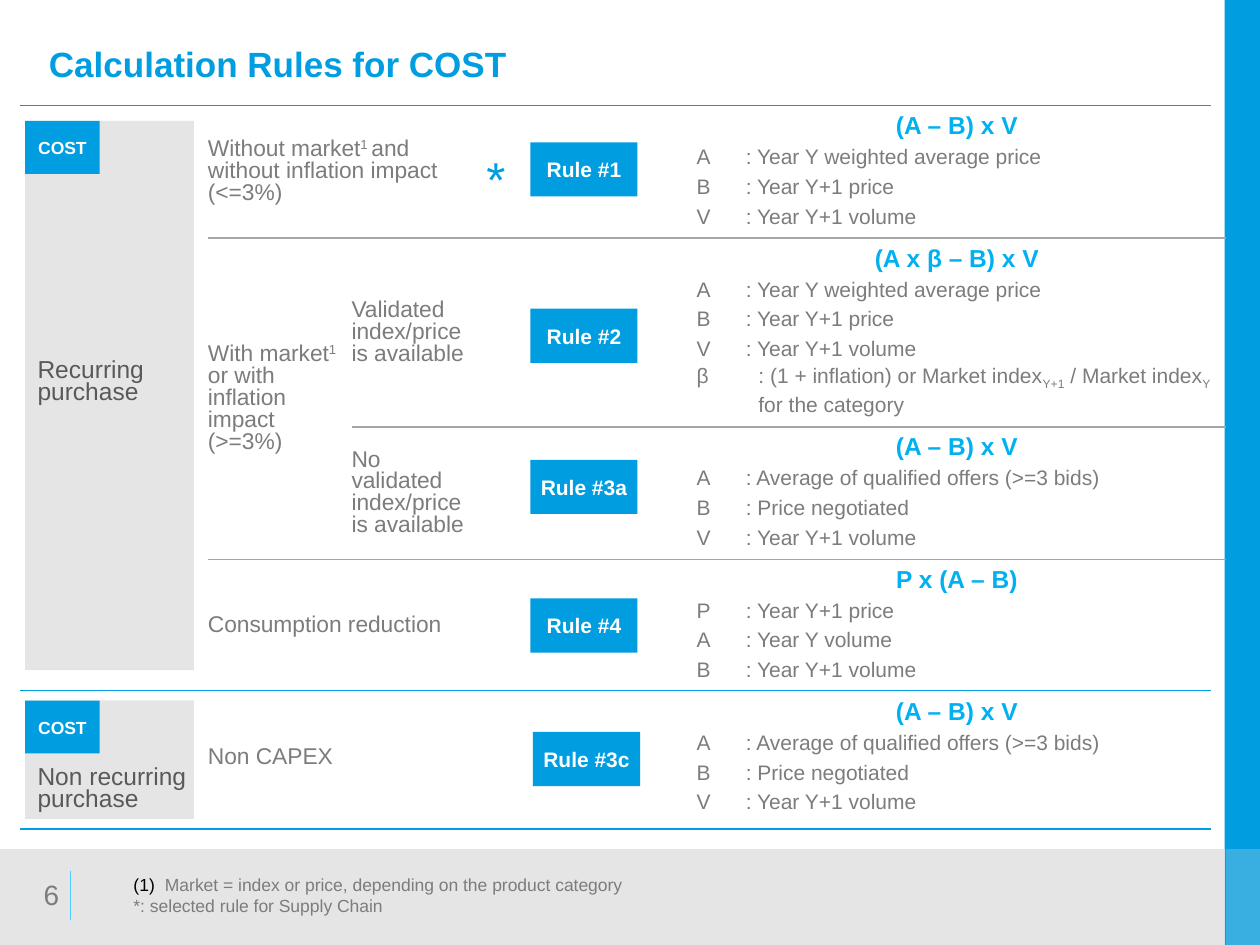
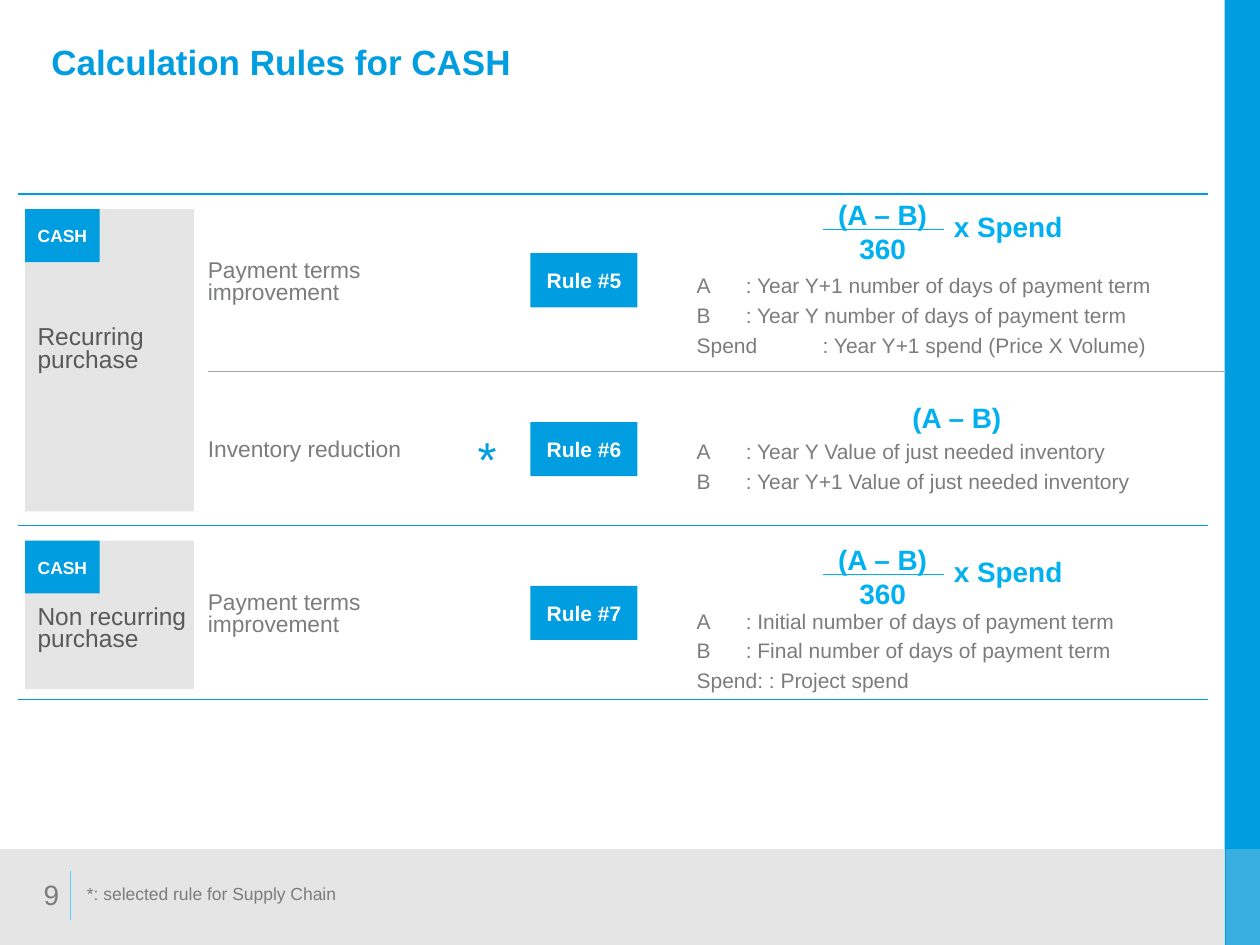
from lxml import etree
from pptx import Presentation, util as u
from pptx.dml.color import RGBColor
from pptx.enum import shapes, text
from pptx.oxml import parse_xml
from pptx.oxml.ns import nsdecls, qn

COLORS = {"brand": "009EE0", "formula": "00B0F0", "body": "7B7C7E", "dark": "595959", "band": "E5E5E5",
          "mark": "53CCFF", "grid": "A6A6A6", "white": "FFFFFF", "black": "000000"}
FONT = "Arial"
WIDTH, HEIGHT = 10, 7.5
BAND_X, BAND_Y = 9.72, 6.74
BADGE_X, BADGE_SIZE = 4.21, (0.85, 0.43)
TABLE_X, CELL_MARGIN = 1.65, 0.07
TAB_STOPS = (0.39, 1)
NO_STYLE = "{2D5ABB26-0587-4C30-8999-92F81FD0307C}"
LEFT, CENTER, RIGHT = text.PP_ALIGN.LEFT, text.PP_ALIGN.CENTER, text.PP_ALIGN.RIGHT
TOP, MIDDLE, BOTTOM = text.MSO_ANCHOR.TOP, text.MSO_ANCHOR.MIDDLE, text.MSO_ANCHOR.BOTTOM
NO_INSETS, DEFAULT_INSETS = (0, 0, 0, 0), (0.1, 0.05, 0.1, 0.05)

YEAR_TERMS = ["A\t: Year Y weighted average price", "B\t: Year Y+1 price", "V\t: Year Y+1 volume"]
OFFER_TERMS = ["A\t: Average of qualified offers (>=3 bids)", "B\t: Price negotiated", "V\t: Year Y+1 volume"]
BETA_TERM = [("β\t: (1 + inflation) or Market index", 0), ("Y+1", -25), (" / Market index", 0),
             ("Y ", -25), ("for the category", 0)]
SELECTED_NOTE = "*: selected rule for Supply Chain"

SLIDES = [
    {
        "topic": "COST", "title_at": (0.29, 0.35), "number": "6",
        "notes": ["Market = index or price, depending on the product category", SELECTED_NOTE],
        "notes_at": (1.06, 6.96, 3.9, 0.46), "numbered_note": True,
        "groups": [("Recurring purchase", 0.96, 4.36, 2.73), ("Non recurring purchase", 5.56, 0.94, 5.96)],
        "rules_x": 0.16, "rules_y": [0.84, 5.48, 6.58],
        "star_at": (3.66, 1.13), "fractions_y": [],
        "badges": [("Rule #1", 0, 1.13), ("Rule #2", 0, 2.45), ("Rule #3a", 0, 3.65), ("Rule #4", 0, 4.75),
                   ("Rule #3c", 0.02, 5.81)],
        "table_y": 0.84, "columns": [1.14, 0.98, 0.08, 1.06, 0.55, 4.27],
        "rows": [1.05, 1.5, 1.05, 1.05, 1.05],
        "merges": [(0, 0, 0, 1), (1, 0, 2, 0), (3, 0, 3, 1), (4, 0, 4, 1)],
        "border_starts": {0: 0, 1: 1, 2: 0},
        "cases": {
            (0, 0): [("Without market", 0), ("1 ", 30), ("and without inflation impact (<=3%)", 0)],
            (1, 0): [("With market", 0), ("1 ", 30), ("or with inflation impact (>=3%)", 0)],
            (1, 1): "Validated index/price is available",
            (2, 1): "No validated index/price is available",
            (3, 0): "Consumption reduction",
            (4, 0): "Non CAPEX",
        },
        "formula_size": 14, "bottom_margins": {},
        "formulas": [
            ("(A – B) x V", YEAR_TERMS),
            ("(A x β – B) x V", YEAR_TERMS + [BETA_TERM]),
            ("(A – B) x V", OFFER_TERMS),
            ("P x (A – B)", ["P\t: Year Y+1 price", "A\t: Year Y volume", "B\t: Year Y+1 volume"]),
            ("(A – B) x V", OFFER_TERMS),
        ],
    },
    {
        "topic": "CASH", "title_at": (0.31, 0.33), "number": "9",
        "notes": [SELECTED_NOTE], "notes_at": (0.69, 7.01, 6.14, 0.17), "numbered_note": False,
        "groups": [("Recurring purchase", 1.66, 2.4, 2.47), ("Non recurring purchase", 4.29, 1.18, 4.69)],
        "rules_x": 0.14, "rules_y": [1.54, 4.17, 5.55],
        "star_at": (3.59, 3.35), "fractions_y": [1.52, 4.26],
        "badges": [("Rule #5", 0, 2.01), ("Rule #6", 0, 3.35), ("Rule #7", 0, 4.65)],
        "table_y": 1.54, "columns": [2.12, 0.08, 1.06, 0.55, 4.27],
        "rows": [1.41, 1.25, 1.36],
        "merges": [], "border_starts": {0: 0},
        "cases": {(0, 0): "Payment terms improvement", (1, 0): "Inventory reduction",
                  (2, 0): "Payment terms improvement"},
        "formula_size": 16, "bottom_margins": {0: 0.11, 2: 0.06},
        "formulas": [
            (None, ["A\t: Year Y+1 number of days of payment term", "B\t: Year Y number of days of payment term",
                    "Spend\t: Year Y+1 spend (Price X Volume)"]),
            ("(A – B)", ["A\t: Year Y Value of just needed inventory",
                         "B\t: Year Y+1 Value of just needed inventory"]),
            (None, ["A\t: Initial number of days of payment term", "B\t: Final number of days of payment term",
                    "Spend: : Project spend"]),
        ],
    },
]


def rgb(name):
    return RGBColor.from_string(COLORS[name])


def write(paragraph, content, size, color, bold=False, align=LEFT, spacing=None):
    runs = [(content, 0)] if isinstance(content, str) else content
    for words, baseline in runs:
        run = paragraph.add_run()
        run.text = words
        if baseline:
            run.font._element.set("baseline", str(baseline * 1000))
    paragraph.alignment = align
    if spacing:
        paragraph.line_spacing = spacing
    font = paragraph.font
    font.name, font.size, font.bold = FONT, u.Pt(size), bold
    font.color.rgb = rgb(color)


def set_frame(frame, insets, anchor=MIDDLE, wrap=True):
    frame.margin_left, frame.margin_top, frame.margin_right, frame.margin_bottom = map(u.Inches, insets)
    frame.vertical_anchor = anchor
    frame.word_wrap = wrap


def add_text(parent, at, content, size, color, insets=DEFAULT_INSETS, anchor=MIDDLE, wrap=True, **style):
    frame = parent.add_textbox(*map(u.Inches, at)).text_frame
    set_frame(frame, insets, anchor, wrap)
    write(frame.paragraphs[0], content, size, color, **style)


def add_block(parent, at, color, label=None, size=10, insets=NO_INSETS, wrap=True):
    shape = parent.add_shape(shapes.MSO_SHAPE.RECTANGLE, *map(u.Inches, at))
    shape.shadow.inherit = False
    shape.fill.solid()
    shape.fill.fore_color.rgb = rgb(color)
    shape.line.fill.background()
    if label:
        set_frame(shape.text_frame, insets, MIDDLE, wrap)
        write(shape.text_frame.paragraphs[0], label, size, "white", True, CENTER)
    return shape


def add_line(parent, x1, y1, x2, y2, color):
    line = parent.add_connector(shapes.MSO_CONNECTOR.STRAIGHT, *map(u.Inches, (x1, y1, x2, y2)))
    line.line.color.rgb = rgb(color)
    line.line.width = u.Pt(0.75)
    etree.SubElement(line._element.spPr, qn("a:effectLst"))


def set_borders(cell, visible_sides):
    fill = cell._tc.get_or_add_tcPr().find(qn("a:noFill"))
    for side in ("lnL", "lnR", "lnT", "lnB"):
        paint = "<a:noFill/>"
        if side in visible_sides:
            paint = f'<a:solidFill><a:srgbClr val="{COLORS["grid"]}"/></a:solidFill>'
        fill.addprevious(parse_xml(f'<a:{side} {nsdecls("a")} w="12700">{paint}</a:{side}>'))


def add_tabs(paragraph):
    tabs = etree.SubElement(paragraph._p.get_or_add_pPr(), qn("a:tabLst"))
    for stop in TAB_STOPS:
        etree.SubElement(tabs, qn("a:tab"), pos=str(u.Inches(stop)), algn="l")


def hang(paragraph, indent):
    properties = paragraph._p.get_or_add_pPr()
    properties.set("marL", str(u.Inches(indent)))
    properties.set("indent", str(-u.Inches(indent)))
    return properties


def set_cell(cell, margin, anchor=MIDDLE):
    cell.margin_left = cell.margin_right = cell.margin_top = cell.margin_bottom = u.Inches(margin)
    cell.vertical_anchor = anchor


def fill_formula(cell, formula, terms, size, bottom_margin):
    set_cell(cell, CELL_MARGIN, MIDDLE if formula else BOTTOM)
    cell.margin_bottom = u.Inches(bottom_margin)
    frame = cell.text_frame
    if formula:
        write(frame.paragraphs[0], formula, size, "formula", True, CENTER, 0.86)
    for index, term in enumerate(terms):
        first = not formula and index == 0
        paragraph = frame.paragraphs[0] if first else frame.add_paragraph()
        add_tabs(paragraph)
        if term is BETA_TERM:
            hang(paragraph, 0.49)
        if not first:
            paragraph.space_before = u.Pt(2)
        write(paragraph, term, 12, "body", spacing=u.Pt(15))


def add_rule_table(parent, page):
    columns, rows, starts = page["columns"], page["rows"], page["border_starts"]
    frame = parent.add_table(len(rows), len(columns), *map(
        u.Inches, (TABLE_X, page["table_y"], sum(columns), sum(rows))))
    table = frame.table
    table.first_row = table.horz_banding = False
    table._tbl.tblPr.find(qn("a:tableStyleId")).text = NO_STYLE
    for column, width in zip(table.columns, columns):
        column.width = u.Inches(width)
    for row, height in zip(table.rows, rows):
        row.height = u.Inches(height)
    for row in range(len(rows)):
        for column in range(len(columns)):
            cell = table.cell(row, column)
            set_cell(cell, 0)
            cell.fill.background()
            edges = {"lnT": row - 1, "lnB": row}
            set_borders(cell, [side for side, edge in edges.items() if edge in starts and column >= starts[edge]])
    for top, left, bottom, right in page["merges"]:
        table.cell(top, left).merge(table.cell(bottom, right))
    for position, case in page["cases"].items():
        write(table.cell(*position).text_frame.paragraphs[0], case, 13, "body", spacing=0.86)
    for row, (formula, terms) in enumerate(page["formulas"]):
        bottom_margin = page["bottom_margins"].get(row, CELL_MARGIN)
        fill_formula(table.cell(row, len(columns) - 1), formula, terms, page["formula_size"], bottom_margin)


def add_fraction(parent, y):
    group = parent.add_group_shape().shapes
    style = {"size": 16, "color": "formula", "bold": True, "anchor": TOP}
    add_text(group, (7.57, y + 0.14, 0.87, 0.27), "x Spend", insets=NO_INSETS, wrap=False, **style)
    add_line(group, 6.53, y + 0.3, 7.49, y + 0.3, "formula")
    add_text(group, (6.82, y + 0.32, 0.37, 0.27), "360", insets=NO_INSETS, wrap=False, **style)
    add_text(group, (6.51, y, 0.99, 0.37), "(A – B)", align=CENTER, **style)


def add_frame(parent, page):
    band_height = HEIGHT - BAND_Y
    add_block(parent, (BAND_X, 0, WIDTH - BAND_X, HEIGHT), "brand")
    add_block(parent, (0, BAND_Y, BAND_X, band_height), "band")
    corner = add_block(parent, (BAND_X + 0.01, BAND_Y, WIDTH - BAND_X - 0.01, band_height), "band")
    tint = corner._element.spPr.find(qn("a:solidFill"))[0]
    etree.SubElement(tint, qn("a:alpha"), val="25000")
    add_line(parent, 0.56, 6.91, 0.56, 7.3, "mark")
    add_text(parent, (*page["title_at"], 9.05, 0.31), f"Calculation Rules for {page['topic']}", 20, "brand", bold=True)
    add_text(parent, (0, 6.9, 0.47, 0.39), page["number"], 16, "body", NO_INSETS, align=RIGHT)


def add_notes(parent, page):
    spacing = 0.86 if page["numbered_note"] else None
    first, *others = page["notes"]
    frame = parent.add_textbox(*map(u.Inches, page["notes_at"])).text_frame
    set_frame(frame, NO_INSETS, TOP, not page["numbered_note"])
    paragraph = frame.paragraphs[0]
    if page["numbered_note"]:
        properties = hang(paragraph, 0.25)
        color = etree.SubElement(properties, qn("a:buClr"))
        etree.SubElement(color, qn("a:srgbClr"), val=COLORS["black"])
        etree.SubElement(properties, qn("a:buFont"), typeface=FONT)
        etree.SubElement(properties, qn("a:buAutoNum"), type="arabicParenBoth")
    write(paragraph, first, 10, "body", spacing=spacing)
    for note in others:
        write(frame.add_paragraph(), note, 10, "body")


def build_slide(presentation, page):
    parent = presentation.slides.add_slide(presentation.slide_layouts[6]).shapes
    add_frame(parent, page)
    add_rule_table(parent, page)
    add_notes(parent, page)
    for y in page["fractions_y"]:
        add_fraction(parent, y)
    for label, shift, y in page["badges"]:
        add_block(parent, (BADGE_X + shift, y, *BADGE_SIZE), "brand", label, 12, wrap=False)
    for label, y, height, label_y in page["groups"]:
        add_block(parent, (0.2, y, 1.34, height), "band")
        add_text(parent, (0.2, label_y, 1.66, 0.62), label, 14, "dark", spacing=u.Pt(13))
        add_block(parent, (0.2, y, 0.59, 0.42), "brand", page["topic"], insets=(0.08, 0.04, 0.08, 0.04))
    for y in page["rules_y"]:
        add_line(parent, page["rules_x"], y, page["rules_x"] + 9.45, y, "brand")
    add_text(parent, (*page["star_at"], 0.55, 0.57), "*", 28, "brand", anchor=TOP, align=CENTER)


def main():
    presentation = Presentation()
    presentation.slide_width, presentation.slide_height = u.Inches(WIDTH), u.Inches(HEIGHT)
    for page in SLIDES:
        build_slide(presentation, page)
    presentation.save("out.pptx")


if __name__ == "__main__":
    main()
